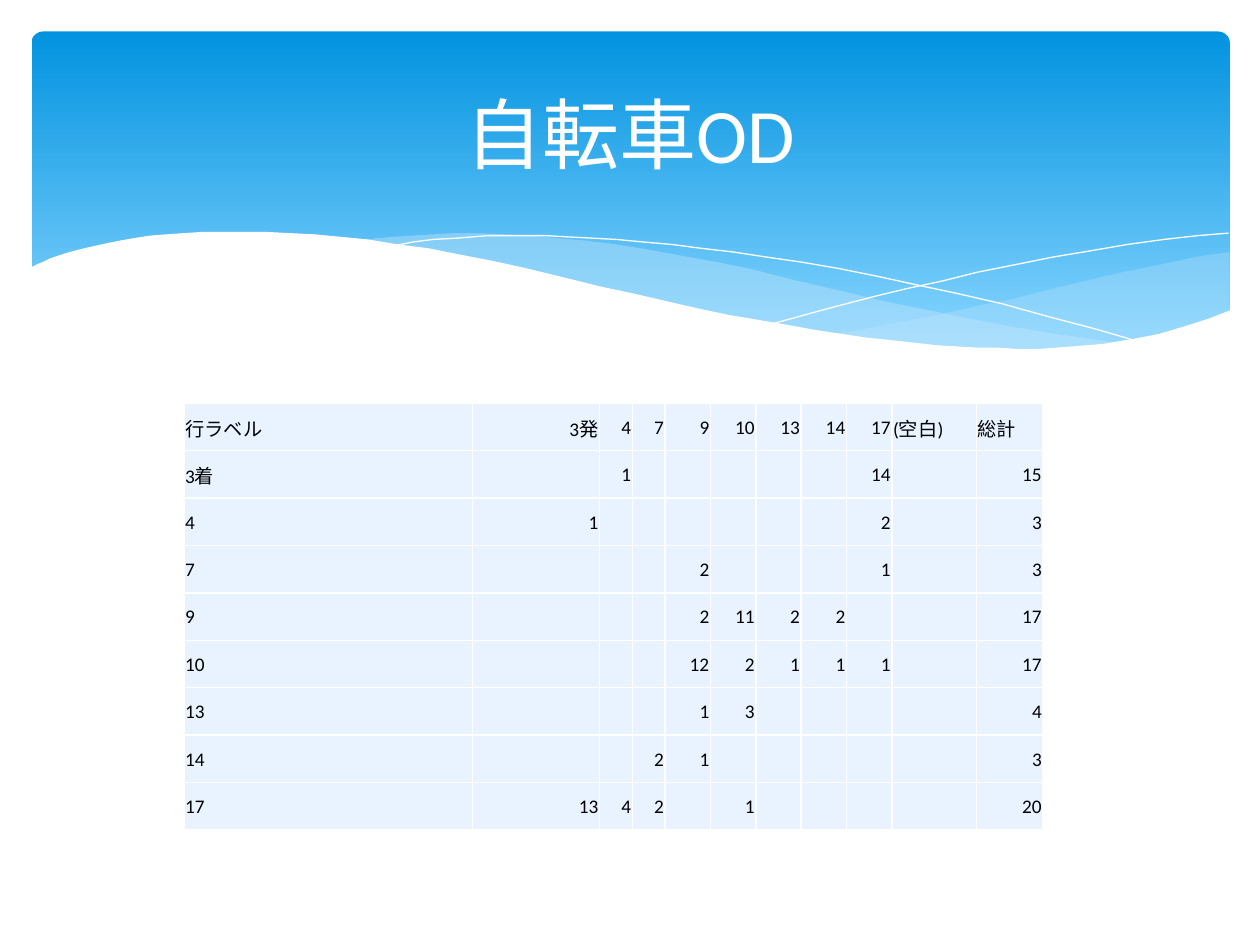
from dataclasses import dataclass

from lxml import etree
from pptx import Presentation
from pptx.dml.color import RGBColor as RGB
from pptx.enum.shapes import MSO_SHAPE as Preset
from pptx.enum.text import MSO_ANCHOR as Anchor, PP_ALIGN as Align
from pptx.oxml.ns import qn
from pptx.util import Inches, Pt


@dataclass(frozen=True)
class Theme:
    font: str = "Calibri"
    title_size: int = 44
    table_size: int = 11
    white: str = "FFFFFF"
    text: str = "000000"
    cell: str = "E8F3FF"
    sky_top: str = "0293E0"
    sky_bottom: str = "83D3FE"
    mist: str = "C6E7FC"


# Wave outlines, in inches
RIGHT_MIST = [
    (9.76, 2), (9.62, 2.02), (9.48, 2.04), (9.35, 2.07), (9.21, 2.1), (9.06, 2.13),
    (8.91, 2.16), (8.61, 2.23), (8.32, 2.3), (8.05, 2.37), (7.79, 2.42), (7.53, 2.48),
    (7.29, 2.53), (7.06, 2.57), (6.83, 2.62), (6.61, 2.65), (6.91, 2.69), (7.19, 2.72),
    (7.45, 2.75), (7.69, 2.77), (7.92, 2.77), (8.14, 2.78), (8.35, 2.77), (8.54, 2.76),
    (8.72, 2.74), (8.89, 2.72), (9.05, 2.69), (9.21, 2.65), (9.35, 2.62), (9.49, 2.57),
    (9.63, 2.52), (9.76, 2.47),
]
MIDDLE_MIST = [
    (8.93, 2.73), (8.66, 2.69), (8.37, 2.65), (8.07, 2.6), (7.75, 2.54), (7.41, 2.47),
    (7.06, 2.4), (6.68, 2.31), (6.29, 2.22), (5.98, 2.14), (5.69, 2.08), (5.41, 2.03),
    (5.14, 1.98), (4.89, 1.94), (4.65, 1.91), (4.42, 1.89), (4.2, 1.87), (3.99, 1.86),
    (3.8, 1.85), (3.61, 1.85), (3.44, 1.86), (3.28, 1.87), (3.13, 1.88), (2.99, 1.89),
    (2.86, 1.91), (3.04, 1.94), (3.23, 1.96), (3.42, 1.99), (3.62, 2.03), (3.83, 2.07),
    (4.04, 2.11), (4.27, 2.16), (4.49, 2.22), (4.91, 2.32), (5.3, 2.4), (5.66, 2.48),
    (6.01, 2.55), (6.34, 2.61), (6.65, 2.66), (6.95, 2.7), (7.22, 2.74), (7.48, 2.76),
    (7.73, 2.77), (7.96, 2.78), (8.18, 2.78), (8.38, 2.78), (8.57, 2.77), (8.76, 2.75),
]
FALLING_LINE = [
    (3.09, 1.95), (3.18, 1.94), (3.28, 1.92), (3.44, 1.9), (3.63, 1.89), (3.87, 1.87),
    (4.16, 1.87), (4.33, 1.87), (4.5, 1.88), (4.69, 1.89), (4.89, 1.9), (5.1, 1.92),
    (5.33, 1.94), (5.56, 1.97), (5.82, 2), (6.08, 2.04), (6.36, 2.08), (6.65, 2.13),
    (6.95, 2.19), (7.27, 2.26), (7.6, 2.33), (7.95, 2.41), (8.31, 2.51), (8.69, 2.61),
    (9.07, 2.72),
]
RISING_LINE = [
    (6.13, 2.57), (6.24, 2.54), (6.53, 2.46), (6.72, 2.41), (6.95, 2.35), (7.2, 2.29),
    (7.48, 2.23), (7.76, 2.16), (8.06, 2.1), (8.36, 2.04), (8.66, 1.99), (8.95, 1.94),
    (9.24, 1.9), (9.51, 1.87), (9.75, 1.85),
]
WHITE_WAVE = [
    (9.77, 2.46), (9.59, 2.53), (9.4, 2.59), (9.2, 2.65), (8.99, 2.69), (8.75, 2.73),
    (8.5, 2.75), (8.23, 2.77), (8.09, 2.77), (7.93, 2.76), (7.78, 2.76), (7.61, 2.75),
    (7.44, 2.74), (7.26, 2.72), (7.08, 2.7), (6.88, 2.68), (6.68, 2.65), (6.48, 2.62),
    (6.26, 2.58), (6.03, 2.54), (5.79, 2.5), (5.55, 2.45), (5.29, 2.39), (5.03, 2.33),
    (4.75, 2.27), (4.47, 2.2), (4.18, 2.13), (3.91, 2.07), (3.65, 2.02), (3.4, 1.97),
    (3.16, 1.94), (2.92, 1.9), (2.71, 1.88), (2.5, 1.86), (2.3, 1.85), (2.11, 1.84),
    (1.77, 1.84), (1.61, 1.84), (1.46, 1.85), (1.32, 1.86), (1.19, 1.87), (1.06, 1.89),
    (0.95, 1.91), (0.85, 1.93), (0.76, 1.95), (0.67, 1.97), (0.59, 1.99), (0.52, 2.01),
    (0.46, 2.03), (0.4, 2.05), (0.36, 2.07), (0.29, 2.1), (0.23, 2.13), (0.23, 3.29),
    (9.77, 3.29),
]

# Trips: origins across, destinations down
COLUMN_WIDTHS = [2.29, 1.01] + [0.26] * 2 + [0.36] * 5 + [0.67, 0.53]
ROW_HEIGHT = 3.39 / 9
TRIPS = [
    ["行ラベル", "3発", "4", "7", "9", "10", "13", "14", "17", "(空白)", "総計"],
    ["3着", "", "1", "", "", "", "", "", "14", "", "15"],
    ["4", "1", "", "", "", "", "", "", "2", "", "3"],
    ["7", "", "", "", "2", "", "", "", "1", "", "3"],
    ["9", "", "", "", "2", "11", "2", "2", "", "", "17"],
    ["10", "", "", "", "12", "2", "1", "1", "1", "", "17"],
    ["13", "", "", "", "1", "3", "", "", "", "", "4"],
    ["14", "", "", "2", "1", "", "", "", "", "", "3"],
    ["17", "13", "4", "2", "", "1", "", "", "", "", "20"],
]
LEFT_HEADINGS = ("(空白)", "総計")


class SlideBuilder:
    def __init__(self, slide, theme):
        self.slide, self.theme = slide, theme

    def add_run(self, para, text, size, color):
        span = para.add_run()
        span.text = text
        span.font.name = self.theme.font
        span.font.size = Pt(size)
        span.font.color.rgb = RGB.from_string(color)

    def banner(self, left, top, width, height):
        box = self.slide.shapes.add_shape(
            Preset.ROUNDED_RECTANGLE, Inches(left), Inches(top), Inches(width), Inches(height))
        box.adjustments[0] = 0.034
        box.shadow.inherit = False
        box.line.fill.background()
        box.fill.gradient()
        box.fill.gradient_angle = 270
        stops = ((0, self.theme.sky_top), (0.9, self.theme.sky_bottom))
        for stop, (position, color) in zip(box.fill.gradient_stops, stops):
            stop.position = position
            stop.color.rgb = RGB.from_string(color)

    def outline(self, points, closed):
        (x, y), *rest = [(Inches(x), Inches(y)) for x, y in points]
        builder = self.slide.shapes.build_freeform(x, y)
        builder.add_line_segments(rest, close=closed)
        shape = builder.convert_to_shape()
        shape.shadow.inherit = False
        return shape

    def wave(self, points, color, opacity=100):
        shape = self.outline(points, closed=True)
        shape.line.fill.background()
        shape.fill.solid()
        shape.fill.fore_color.rgb = RGB.from_string(color)
        if opacity < 100:
            tint = next(shape.element.iter(qn("a:srgbClr")))
            etree.SubElement(tint, qn("a:alpha"), val=str(opacity * 1000))

    def hairline(self, points):
        shape = self.outline(points, closed=False)
        shape.fill.background()
        shape.line.color.rgb = RGB.from_string(self.theme.white)
        shape.line.width = Pt(0)

    def title(self, text, left, top, width, height):
        box = self.slide.shapes.title
        box.left, box.top, box.width, box.height = map(Inches, (left, top, width, height))
        box.text_frame.vertical_anchor = Anchor.MIDDLE
        para = box.text_frame.paragraphs[0]
        para.alignment = Align.CENTER
        self.add_run(para, text, self.theme.title_size, self.theme.white)
        # Bring the title in front of the banner
        self.slide.shapes.element.append(box.element)

    def cell_borders(self, cell):
        properties = cell._tc.get_or_add_tcPr()
        for index, side in enumerate(("a:lnL", "a:lnR", "a:lnT", "a:lnB")):
            line = etree.Element(qn(side), w=str(Pt(1)))
            fill = etree.SubElement(line, qn("a:solidFill"))
            etree.SubElement(fill, qn("a:srgbClr"), val=self.theme.white)
            properties.insert(index, line)

    def table(self, rows, left, top, widths, row_height):
        frame = self.slide.shapes.add_table(
            len(rows), len(widths), Inches(left), Inches(top),
            Inches(sum(widths)), Inches(row_height * len(rows)))
        table = frame.table
        table.first_row = table.horz_banding = False
        for column, width in zip(table.columns, widths):
            column.width = Inches(width)
        for r, values in enumerate(rows):
            table.rows[r].height = Inches(row_height)
            for c, text in enumerate(values):
                cell = table.cell(r, c)
                cell.fill.solid()
                cell.fill.fore_color.rgb = RGB.from_string(self.theme.cell)
                self.cell_borders(cell)
                cell.margin_left = cell.margin_right = cell.margin_top = Inches(0.01)
                cell.margin_bottom = 0
                cell.vertical_anchor = Anchor.MIDDLE
                if text:
                    para = cell.text_frame.paragraphs[0]
                    to_left = c == 0 or text in LEFT_HEADINGS
                    para.alignment = Align.LEFT if to_left else Align.RIGHT
                    self.add_run(para, text, self.theme.table_size, self.theme.text)


def main():
    deck = Presentation()
    deck.slide_width, deck.slide_height = Inches(10), Inches(7.5)
    theme = Theme()
    page = SlideBuilder(deck.slides.add_slide(deck.slide_layouts[5]), theme)

    # Banner with waves
    page.banner(0.25, 0.25, 9.51, 2.7)
    page.wave(RIGHT_MIST, theme.mist, opacity=29)
    page.wave(MIDDLE_MIST, theme.mist, opacity=40)
    page.hairline(FALLING_LINE)
    page.hairline(RISING_LINE)
    page.wave(WHITE_WAVE, theme.white)

    # Title and trip table
    page.title("自転車OD", 0.5, 0.37, 9, 1.37)
    page.table(TRIPS, 1.46, 3.2, COLUMN_WIDTHS, ROW_HEIGHT)
    deck.save("out.pptx")


if __name__ == "__main__":
    main()
